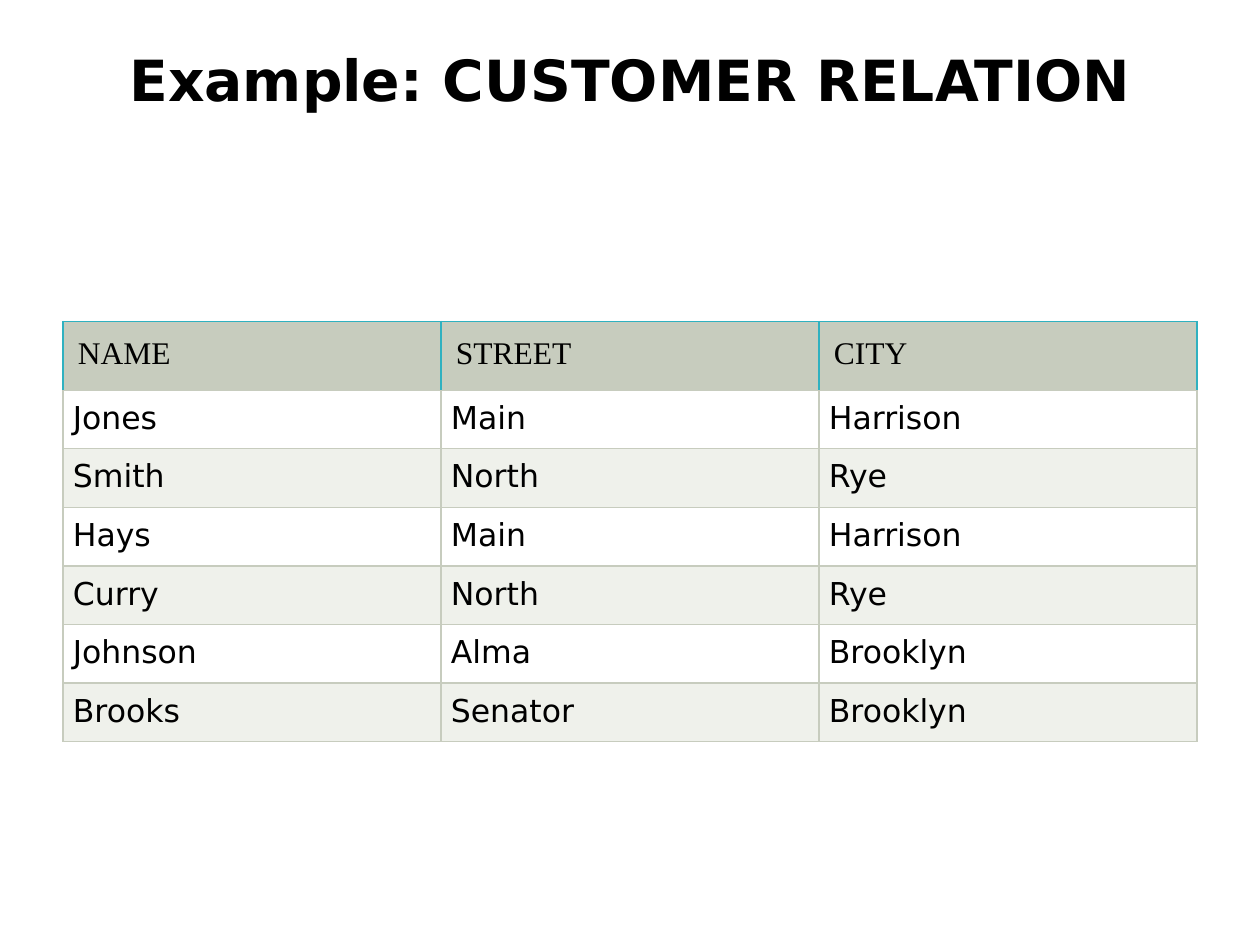
import pptx
import pptx.dml.color
import pptx.enum.text
import pptx.oxml.ns
import pptx.util
from lxml import etree

Cm = pptx.util.Cm

COLORS = {
    "text": "000000",
    "header": "C7CCBE",
    "grid": "C7CCBE",
    "header_edge": "30B1C0",
    "odd": "FFFFFF",
    "even": "EFF1EB",
}

CUSTOMERS = [
    ("NAME", "STREET", "CITY"),
    ("Jones", "Main", "Harrison"),
    ("Smith", "North", "Rye"),
    ("Hays", "Main", "Harrison"),
    ("Curry", "North", "Rye"),
    ("Johnson", "Alma", "Brooklyn"),
    ("Brooks", "Senator", "Brooklyn"),
]


def rgb(name):
    return pptx.dml.color.RGBColor.from_string(COLORS[name])


def write_text(frame, text, *, font, size, bold=False, align="LEFT"):
    paragraph = frame.paragraphs[0]
    paragraph.alignment = getattr(pptx.enum.text.PP_ALIGN, align)
    run = paragraph.add_run()
    run.text = text
    run.font.name = font
    run.font.size = pptx.util.Pt(size)
    run.font.bold = bold
    run.font.color.rgb = rgb("text")


class SlideBuilder:
    body_font = "DejaVu Sans"
    header_font = "Times New Roman"
    title_size = 32.4
    cell_size = 18
    border_width = 0.75

    def __init__(self, presentation):
        self.slide = presentation.slides.add_slide(presentation.slide_layouts[5])

    def title(self, text, left, top, width, height):
        heading = self.slide.shapes.title
        heading.left, heading.top = Cm(left), Cm(top)
        heading.width, heading.height = Cm(width), Cm(height)
        frame = heading.text_frame
        frame.word_wrap = True
        frame.auto_size = pptx.enum.text.MSO_AUTO_SIZE.NONE
        frame.vertical_anchor = pptx.enum.text.MSO_ANCHOR.TOP
        frame.margin_top = Cm(0.15)
        write_text(frame, text, font=self.body_font, size=self.title_size,
                   bold=True, align="CENTER")

    def border(self, cell, side, color):
        properties = cell._tc.get_or_add_tcPr()
        qn = pptx.oxml.ns.qn
        line = etree.SubElement(properties, qn(f"a:ln{side}"),
                                w=str(pptx.util.Pt(self.border_width)))
        fill = etree.SubElement(line, qn("a:solidFill"))
        etree.SubElement(fill, qn("a:srgbClr"), val=COLORS[color])

    def cell(self, cell, text, *, font, margin, fill, edge):
        cell.margin_left = cell.margin_right = Cm(margin)
        cell.margin_top = cell.margin_bottom = Cm(margin)
        for side in "LRT":
            self.border(cell, side, edge)
        self.border(cell, "B", "grid")
        cell.fill.solid()
        cell.fill.fore_color.rgb = rgb(fill)
        write_text(cell.text_frame, text, font=font, size=self.cell_size)

    def table(self, records, left, top, width, header_height, row_height):
        height = header_height + row_height * (len(records) - 1)
        table = self.slide.shapes.add_table(
            len(records), len(records[0]),
            Cm(left), Cm(top), Cm(width), Cm(height)).table
        for row_index, record in enumerate(records):
            if row_index == 0:
                row_size = header_height
                style = dict(font=self.header_font, margin=0.3,
                             fill="header", edge="header_edge")
            else:
                row_size = row_height
                style = dict(font=self.body_font, margin=0.2,
                             fill="odd" if row_index % 2 else "even", edge="grid")
            table.rows[row_index].height = Cm(row_size)
            for column_index, value in enumerate(record):
                self.cell(table.cell(row_index, column_index), value, **style)
        for column in table.columns:
            column.width = Cm(width / len(records[0]))


def main():
    presentation = pptx.Presentation()
    presentation.slide_width = Cm(25.4)
    presentation.slide_height = Cm(19.05)
    builder = SlideBuilder(presentation)
    builder.title("Example: CUSTOMER RELATION", 1.27, 0.76, 22.86, 3.18)
    builder.table(CUSTOMERS, 1.27, 6.48, 22.86, 1.39, 1.18)
    presentation.save("out.pptx")


if __name__ == "__main__":
    main()
